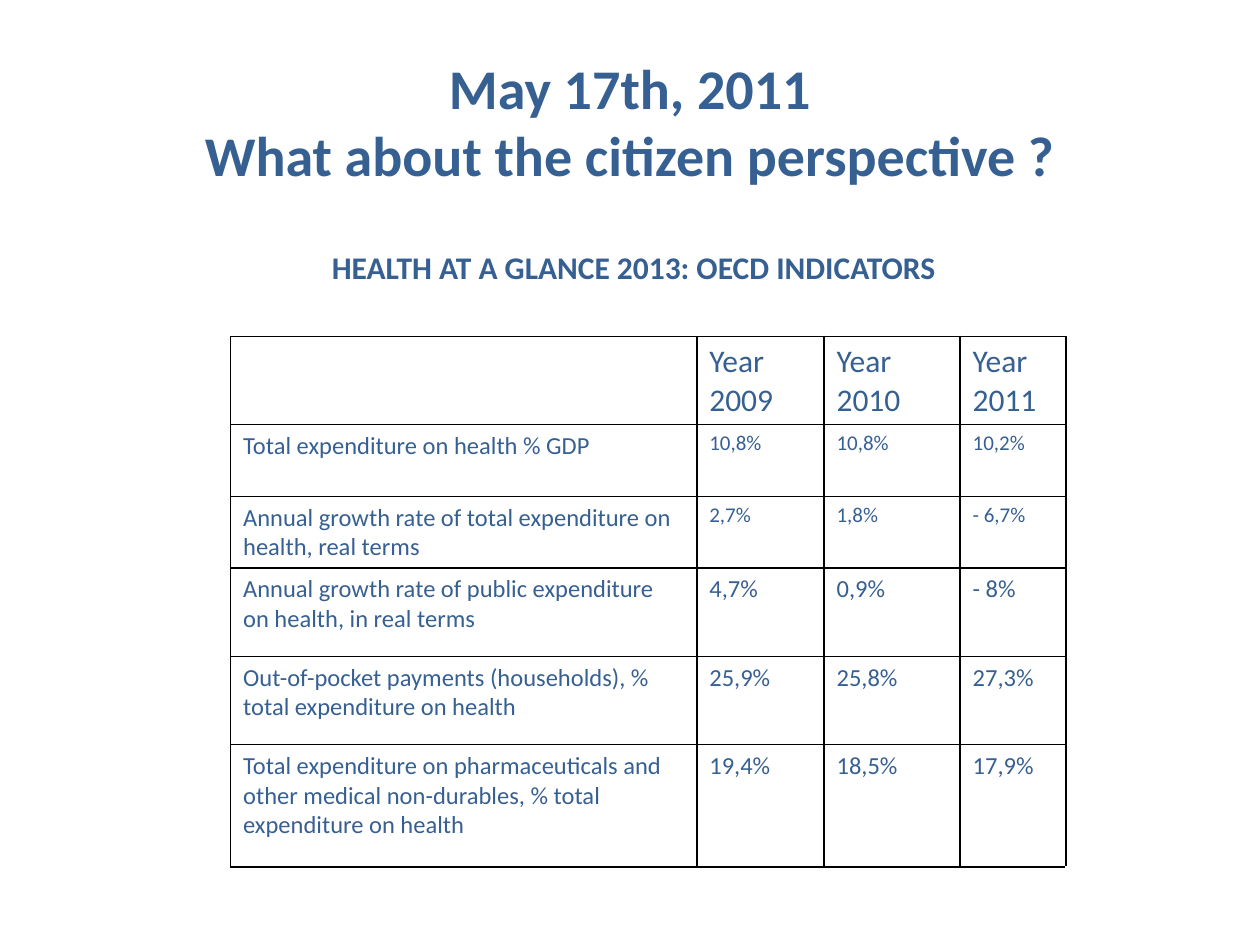
"""Build a slide with a table of health expenditure indicators."""
import pptx
import pptx.dml.color
import pptx.enum.text
import pptx.oxml
import pptx.oxml.ns
import pptx.util
from dataclasses import dataclass

Inches = pptx.util.Inches


@dataclass(frozen=True)
class Theme:
    font: str = "Calibri"
    text: str = "376092"
    border: str = "000000"
    border_width: float = 1
    title: int = 32
    heading: int = 18
    label: int = 14
    small: int = 12


theme = Theme()


def write_text(frame, text, size, bold=False, align=pptx.enum.text.PP_ALIGN.LEFT,
               anchor=pptx.enum.text.MSO_ANCHOR.TOP):
    frame.text = text
    frame.word_wrap = True
    frame.vertical_anchor = anchor
    for paragraph in frame.paragraphs:
        paragraph.alignment = align
        paragraph.font.name = theme.font
        paragraph.font.size = pptx.util.Pt(size)
        paragraph.font.bold = bold
        paragraph.font.color.rgb = pptx.dml.color.RGBColor.from_string(theme.text)
        for run in paragraph.runs:
            run.font.name = theme.font
            run.font.size = pptx.util.Pt(size)
            run.font.bold = bold
            run.font.color.rgb = pptx.dml.color.RGBColor.from_string(theme.text)


def draw_borders(cell, sides):
    properties = cell._tc.get_or_add_tcPr()
    for index, side in enumerate(sides):
        properties.insert(index, pptx.oxml.parse_xml(
            f'<a:ln{side} {pptx.oxml.ns.nsdecls("a")} w="{pptx.util.Pt(theme.border_width)}">'
            f'<a:solidFill><a:srgbClr val="{theme.border}"/></a:solidFill></a:ln{side}>'))


presentation = pptx.Presentation()
presentation.slide_width = Inches(10)
presentation.slide_height = Inches(7.5)
slide = presentation.slides.add_slide(presentation.slide_layouts[5])
center = pptx.enum.text.PP_ALIGN.CENTER

title = slide.shapes.title
title.left, title.top = Inches(0.5), Inches(0.33)
title.width, title.height = Inches(9), Inches(1.25)
write_text(title.text_frame, "May 17th, 2011\nWhat about the citizen perspective ?",
           theme.title, bold=True, align=center,
           anchor=pptx.enum.text.MSO_ANCHOR.MIDDLE)

subtitle = slide.shapes.add_textbox(Inches(1.17), Inches(1.92), Inches(7.72), Inches(1.01))
write_text(subtitle.text_frame, "HEALTH AT A GLANCE 2013: OECD INDICATORS",
           theme.heading, bold=True, align=center)

indicators = [
    (0.7, theme.heading, ["", "Year 2009", "Year 2010", "Year 2011"]),
    (0.57, theme.small, ["Total expenditure on health % GDP", "10,8%", "10,8%", "10,2%"]),
    (0.57, theme.small, ["Annual growth rate of total expenditure on health, real terms",
                         "2,7%", "1,8%", "- 6,7%"]),
    (0.7, theme.label, ["Annual growth rate of public expenditure on health, in real terms",
                        "4,7%", "0,9%", "- 8%"]),
    (0.7, theme.label, ["Out-of-pocket payments (households), % total expenditure on health",
                        "25,9%", "25,8%", "27,3%"]),
    (0.97, theme.label, ["Total expenditure on pharmaceuticals and other medical "
                         "non-durables, % total expenditure on health",
                         "19,4%", "18,5%", "17,9%"]),
]
column_widths = [3.7, 1.01, 1.08, 0.84, 0.23]
table = slide.shapes.add_table(
    len(indicators), len(column_widths), Inches(1.83), Inches(2.67),
    Inches(sum(column_widths)), Inches(sum(height for height, _, _ in indicators))).table
table.first_row = False
table.horz_banding = False
for column, width in zip(table.columns, column_widths):
    column.width = Inches(width)

for row_index, (height, value_size, texts) in enumerate(indicators):
    table.rows[row_index].height = Inches(height)
    for column_index, text in enumerate(texts):
        cell = table.cell(row_index, column_index)
        cell.fill.background()
        draw_borders(cell, "LRTB")
        size = value_size if column_index else theme.label
        write_text(cell.text_frame, text, size)
    margin_cell = table.cell(row_index, len(texts))
    margin_cell.fill.background()
    draw_borders(margin_cell, "L")

last_column = len(column_widths) - 1
table.cell(0, last_column).merge(table.cell(len(indicators) - 1, last_column))

presentation.save("out.pptx")
